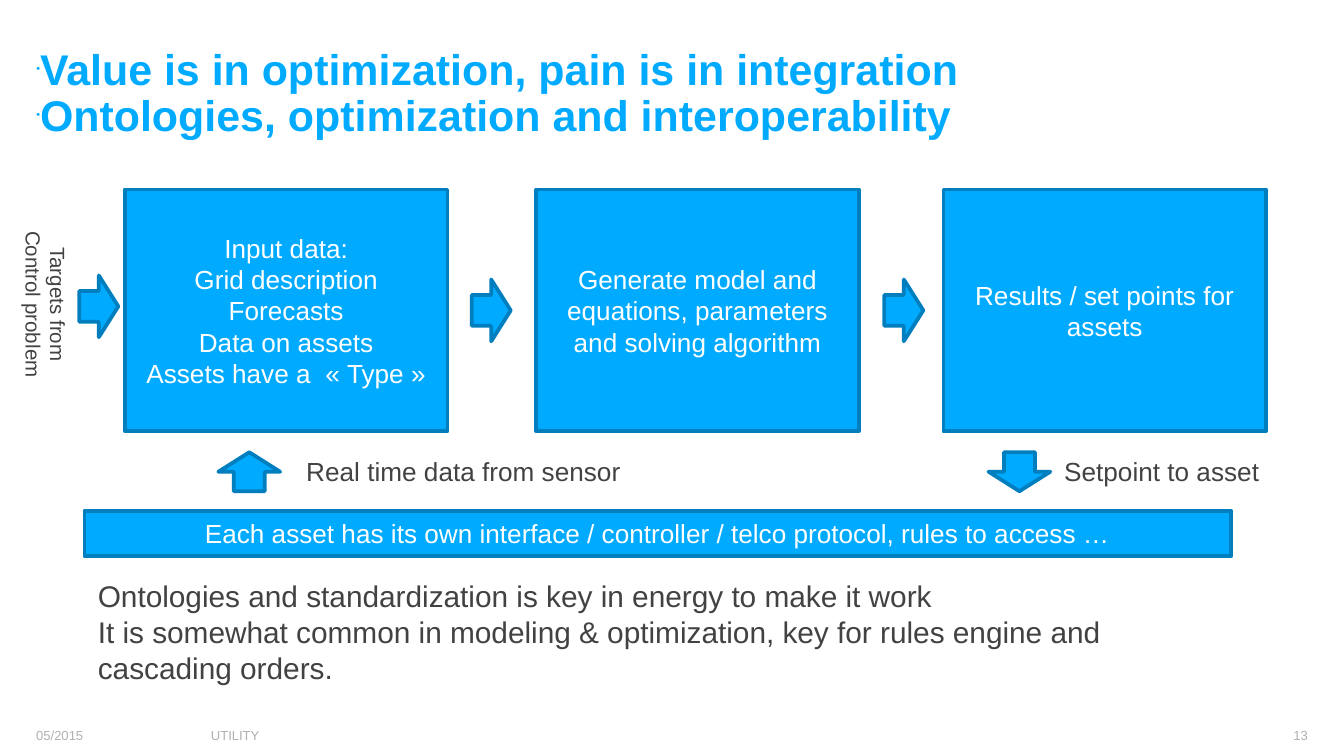
from lxml import etree
from pptx import Presentation
from pptx import util as u
from pptx.dml.color import RGBColor
from pptx.enum import shapes, text
from pptx.oxml.ns import qn

PX = 9144  # EMU per px, 100 px to the inch
SLIDE_WIDTH = 1000
BLUE, EDGE, WHITE, DARK, GREY = "00AAFF", "007EBD", "FFFFFF", "424242", "B1B1B1"
LEFT, CENTER, RIGHT = text.PP_ALIGN.LEFT, text.PP_ALIGN.CENTER, text.PP_ALIGN.RIGHT
MIDDLE = text.MSO_ANCHOR.MIDDLE
RECTANGLE, ARROW = shapes.MSO_SHAPE.RECTANGLE, shapes.MSO_SHAPE.RIGHT_ARROW

TITLE = ["Value is in optimization, pain is in integration",
         "Ontologies, optimization and interoperability"]
STEPS = [
    (93, ["Input data:", "Grid description", "Forecasts", "Data on assets",
          "Assets have a  «\u00a0Type\u00a0»"]),
    (399, ["Generate model and equations, parameters and solving algorithm"]),
    (702, ["Results / set points for assets"]),
]
STEP_TOP, STEP_WIDTH, STEP_HEIGHT = 141, 240, 180
ARROW_SIZE = (29, 46)
ARROWS = [  # left, top, rotation
    (59, 205, 0), (351, 208, 0), (658, 208, 0), (744, 328, 90), (171, 328, 270),
]
INTERFACE_BAR = ["Each asset has its own interface / controller / telco protocol, rules to access …"]
CONCLUSION = ["Ontologies and standardization is key in energy to make it work",
              "It is somewhat common in modeling & optimization, key for rules engine "
              "and cascading orders."]
FLOW_LABELS = [
    ((218, 334, 255, 34), "Real time data from sensor"),
    ((782, 334, 166, 34), "Setpoint to asset"),
]
FOOTER = [  # left, width, text, alignment
    (27, 126, "05/2015", LEFT), (157, 744, "UTILITY", LEFT), (902, 71, "13", RIGHT),
]


def color(value):
    return RGBColor.from_string(value)


def emu(box):
    return [u.Emu(length * PX) for length in box]


def add_bullet(paragraph):
    properties = paragraph._p.get_or_add_pPr()
    properties.set("marL", "0")
    properties.set("indent", "0")
    bullet_color = etree.SubElement(properties, qn("a:buClr"))
    etree.SubElement(bullet_color, qn("a:srgbClr"), val=BLUE)
    etree.SubElement(properties, qn("a:buSzPct"), val="25000")
    etree.SubElement(properties, qn("a:buFont"), typeface="Arial")
    etree.SubElement(properties, qn("a:buChar"), char="•")


def write(shape, lines, size, ink, align=LEFT, bold=False, bullets=False, **frame_format):
    """Fill a shape with one paragraph per line; frame_format goes to its text frame."""
    frame = shape.text_frame
    for name, value in {"word_wrap": True, **frame_format}.items():
        setattr(frame, name, value)
    for index, line in enumerate(lines):
        paragraph = frame.add_paragraph() if index else frame.paragraphs[0]
        if bullets:
            add_bullet(paragraph)
            paragraph.line_spacing = 0.9
        paragraph.alignment = align
        run = paragraph.add_run()
        run.text = line
        for name, value in {"name": "Arial", "size": u.Pt(size), "bold": bold}.items():
            setattr(run.font, name, value)
        run.font.color.rgb = color(ink)


def add_text(slide, box, *args, **kwargs):
    shape = slide.shapes.add_textbox(*emu(box))
    write(shape, *args, **kwargs)
    return shape


def add_block(slide, kind, box, lines=()):
    shape = slide.shapes.add_shape(kind, *emu(box))
    shape.shadow.inherit = False
    shape.fill.solid()
    shape.fill.fore_color.rgb = color(BLUE)
    shape.line.color.rgb = color(EDGE)
    shape.line.width = u.Pt(2)
    write(shape, lines, 14, WHITE, CENTER, vertical_anchor=MIDDLE)
    return shape


def main():
    presentation = Presentation()
    presentation.slide_width = u.Emu(SLIDE_WIDTH * PX)
    presentation.slide_height = u.Emu(SLIDE_WIDTH * PX * 9 // 16)
    slide = presentation.slides.add_slide(presentation.slide_layouts[6])
    no_margins = dict.fromkeys(
        ("margin_left", "margin_top", "margin_right", "margin_bottom"), 0)

    add_text(slide, (27, 33, 945, 75), TITLE, 23, BLUE, bold=True, bullets=True,
             vertical_anchor=MIDDLE, **no_margins)
    for left, width, label, align in FOOTER:
        add_text(slide, (left, 535, width, 27), [label], 7, GREY, align,
                 **{**no_margins, "margin_top": u.Emu(6 * PX)})

    for left, lines in STEPS:
        add_block(slide, RECTANGLE, (left, STEP_TOP, STEP_WIDTH, STEP_HEIGHT), lines)
    for left, top, rotation in ARROWS:
        add_block(slide, ARROW, (left, top, *ARROW_SIZE)).rotation = rotation

    add_block(slide, RECTANGLE, (63, 380, 853, 34), INTERFACE_BAR)
    add_text(slide, (63, 425, 853, 91), CONCLUSION, 16, DARK)
    for box, label in FLOW_LABELS:
        add_text(slide, box, [label], 14, DARK, word_wrap=False)
    targets = add_text(slide, (-31, 203, 130, 47), ["Targets from Control problem"],
                       11, DARK, CENTER)
    targets.rotation = 90
    presentation.save("out.pptx")


if __name__ == "__main__":
    main()
